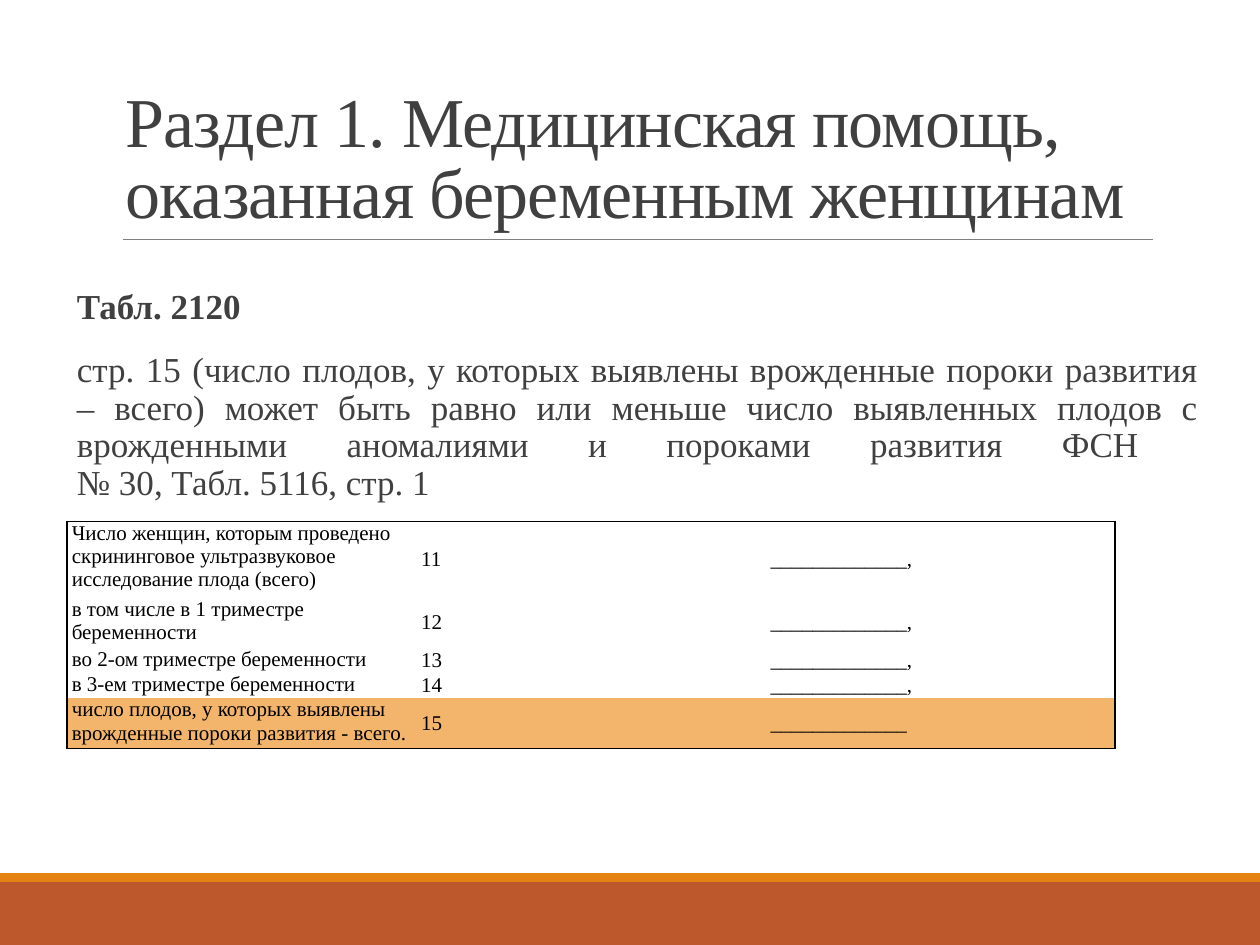
"""Build the slide on screening of pregnant women, on a grid of 100 columns by 75 rows."""
from typing import NamedTuple

from lxml import etree
from pptx import Presentation, util as u
from pptx.dml.color import RGBColor
from pptx.enum import shapes, text
from pptx.oxml import ns

COLORS = {"ink": "404040", "black": "000000", "rule": "808080",
          "footer": "BD582C", "stripe": "E48312", "highlight": "F3B56C"}
FONT = "Times New Roman"
UNIT = u.Inches(10) / 100
COLUMN_WIDTH = 27.73
BLANK = "_" * 13


class Box(NamedTuple):
    left: float
    top: float
    width: float
    height: float


class Band(NamedTuple):
    box: Box
    color: str


class Indicator(NamedTuple):
    label: str
    number: str
    entry: str
    height: float
    color: str = ""


BANDS = [Band(Box(0, 70, 100, 5), "footer"), Band(Box(0, 69.3, 100, 0.7), "stripe")]
INDICATORS = [
    Indicator("Число женщин, которым проведено скрининговое ультразвуковое "
              "исследование плода (всего)", "11", BLANK + ",", 5.9),
    Indicator("в том числе в 1 триместре беременности", "12", BLANK + ",", 3.3),
    Indicator("во 2-ом триместре беременности", "13", BLANK + ",", 1.6),
    Indicator("в 3-ем триместре беременности", "14", BLANK + ",", 1.6),
    Indicator("число плодов, у которых выявлены врожденные пороки развития - всего.",
              "15", BLANK, 3.3, "highlight"),
]
HEADING = "Раздел 1. Медицинская помощь, оказанная беременным женщинам"
TABLE_REFERENCE = "Табл. 2120"
CHECK_RULE = ("стр. 15 (число плодов, у которых выявлены врожденные пороки развития – всего) "
              "может быть равно или меньше число выявленных плодов с врожденными аномалиями "
              "и пороками развития ФСН \v№ 30, Табл. 5116, стр. 1")


def grid(units: float) -> int:
    return round(units * UNIT)


def place(box: Box) -> list[int]:
    return [grid(length) for length in box]


def rgb(color: str) -> RGBColor:
    return RGBColor.from_string(COLORS[color])


def style(paragraph, size: float, color: str, before: float = 0, after: float = 0,
          line: float = 1.0, indent: float = 0, align=text.PP_ALIGN.LEFT) -> None:
    font = paragraph.font
    font.name, font.size = FONT, u.Pt(size)
    font.color.rgb = rgb(color)
    paragraph.space_before, paragraph.space_after = u.Pt(before), u.Pt(after)
    paragraph.line_spacing, paragraph.alignment = line, align
    paragraph._p.get_or_add_pPr().set("marL", str(grid(indent)))


def add_band(slide, band: Band) -> None:
    strip = slide.shapes.add_shape(shapes.MSO_SHAPE.RECTANGLE, *place(band.box))
    strip.shadow.inherit = False
    strip.fill.solid()
    strip.fill.fore_color.rgb = rgb(band.color)
    strip.line.fill.background()


def add_rule(slide, left: float, right: float, top: float) -> None:
    rule = slide.shapes.add_connector(shapes.MSO_CONNECTOR.STRAIGHT,
                                      grid(left), grid(top), grid(right), grid(top))
    rule.line.color.rgb = rgb("rule")
    rule.line.width = u.Pt(0.5)
    etree.SubElement(rule._element.spPr, ns.qn("a:effectLst"))


def add_heading(slide) -> None:
    frame = slide.shapes.add_textbox(*place(Box(9, 3.1, 82.5, 15.9))).text_frame
    frame.word_wrap = True
    frame.vertical_anchor = text.MSO_ANCHOR.BOTTOM
    frame.text = HEADING
    style(frame.paragraphs[0], 40, "ink", line=0.85)
    frame.paragraphs[0].font._rPr.set("spc", "-50")


def add_explanation(slide) -> None:
    frame = slide.shapes.add_textbox(*place(Box(5.1, 22.5, 90, 49.5))).text_frame
    frame.word_wrap = True
    frame.margin_left = frame.margin_right = 0
    reference, check = frame.paragraphs[0], frame.add_paragraph()
    reference.text, check.text = TABLE_REFERENCE, CHECK_RULE
    for paragraph in (reference, check):
        style(paragraph, 20, "ink", before=12, after=2, line=0.9, indent=1)
    reference.font.bold = True
    check.alignment = text.PP_ALIGN.JUSTIFY


def set_borders(cell, sides: dict[str, bool]) -> None:
    properties = cell._tc.get_or_add_tcPr()
    for side, visible in sides.items():
        border = etree.SubElement(properties, ns.qn(f"a:ln{side}"), w=str(u.Pt(1)))
        fill = etree.SubElement(border, ns.qn("a:solidFill" if visible else "a:noFill"))
        if visible:
            etree.SubElement(fill, ns.qn("a:srgbClr"), val=COLORS["black"])


def fill_cell(cell, content: str, color: str, align, anchor) -> None:
    cell.margin_left = cell.margin_right = cell.margin_top = cell.margin_bottom = 0
    cell.vertical_anchor = anchor
    cell.text = content
    style(cell.text_frame.paragraphs[0], 12, "black", before=5, after=5, indent=0.4, align=align)
    if color:
        cell.fill.solid()
        cell.fill.fore_color.rgb = rgb(color)
    else:
        cell.fill.background()


def add_indicators(slide, indicators: list[Indicator]) -> None:
    layout = [(text.PP_ALIGN.LEFT, text.MSO_ANCHOR.TOP),
              (text.PP_ALIGN.JUSTIFY, text.MSO_ANCHOR.MIDDLE),
              (text.PP_ALIGN.LEFT, text.MSO_ANCHOR.MIDDLE)]
    box = Box(5.3, 41.4, COLUMN_WIDTH * len(layout), sum(i.height for i in indicators))
    table = slide.shapes.add_table(len(indicators), len(layout), *place(box)).table
    table.first_row = table.horz_banding = False
    for column in table.columns:
        column.width = grid(COLUMN_WIDTH)
    last_row, last_column = len(indicators) - 1, len(layout) - 1
    for row, indicator in enumerate(indicators):
        table.rows[row].height = grid(indicator.height)
        contents = (indicator.label, indicator.number, indicator.entry)
        for column, (content, (align, anchor)) in enumerate(zip(contents, layout)):
            cell = table.cell(row, column)
            set_borders(cell, {"L": column == 0, "R": column == last_column,
                               "T": row == 0, "B": row == last_row})
            fill_cell(cell, content, indicator.color, align, anchor)


def main() -> None:
    deck = Presentation()
    deck.slide_width, deck.slide_height = grid(100), grid(75)
    slide = deck.slides.add_slide(deck.slide_layouts[6])
    for band in BANDS:
        add_band(slide, band)
    add_rule(slide, 9.8, 91.5, 19)
    add_heading(slide)
    add_explanation(slide)
    add_indicators(slide, INDICATORS)
    deck.save("out.pptx")


if __name__ == "__main__":
    main()
